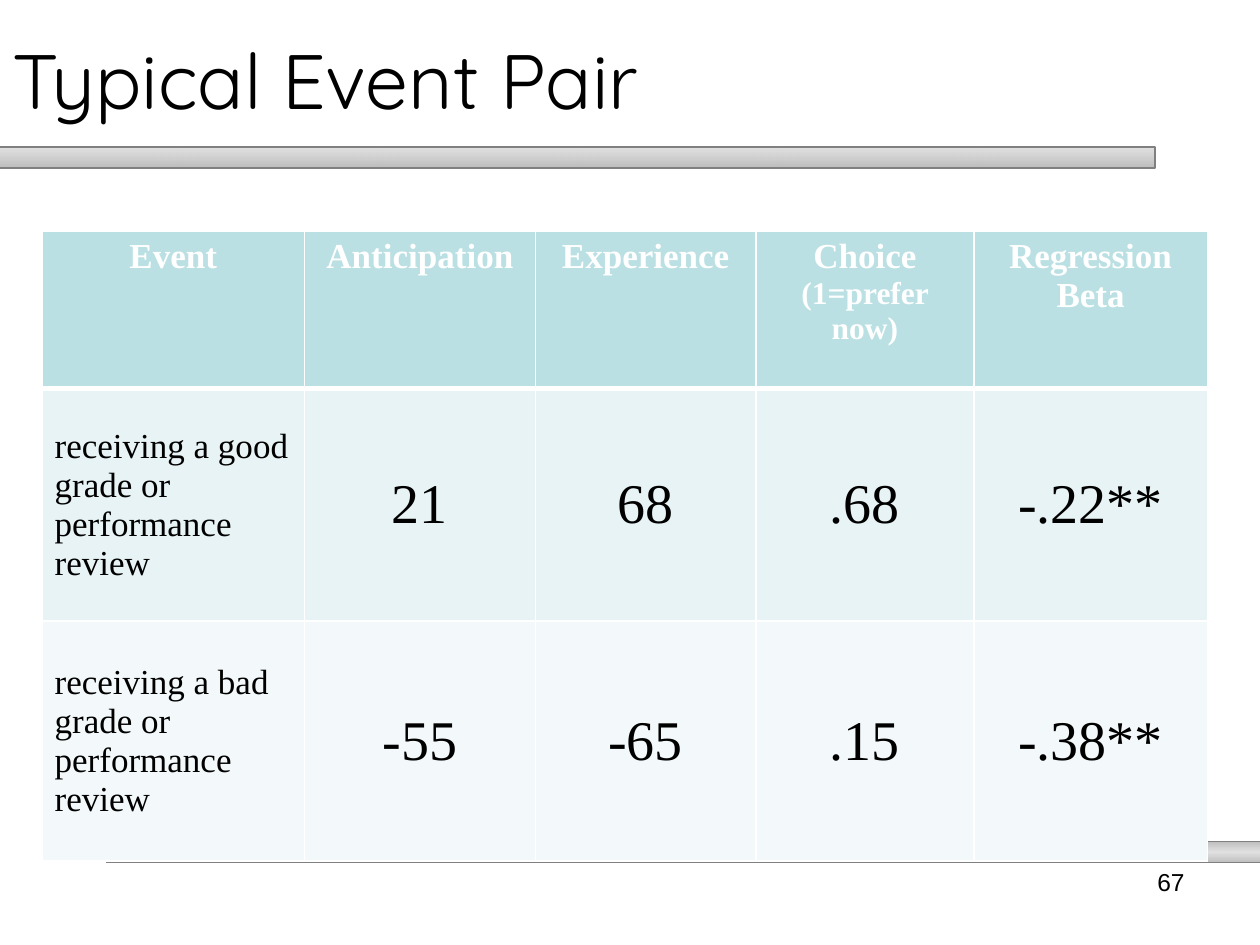
from dataclasses import dataclass

from lxml import etree
from pptx import Presentation
from pptx.dml.color import RGBColor
from pptx.enum.shapes import MSO_SHAPE
from pptx.enum.text import MSO_ANCHOR, PP_ALIGN
from pptx.oxml import parse_xml
from pptx.oxml.ns import nsdecls, qn
from pptx.util import Pt

RECT = MSO_SHAPE.RECTANGLE
LEFT, CENTER, RIGHT = PP_ALIGN.LEFT, PP_ALIGN.CENTER, PP_ALIGN.RIGHT
TOP, MIDDLE = MSO_ANCHOR.TOP, MSO_ANCHOR.MIDDLE

BLACK = RGBColor(0x00, 0x00, 0x00)
WHITE = RGBColor(0xFF, 0xFF, 0xFF)
GRAY = RGBColor(0x80, 0x80, 0x80)
SILVER = RGBColor(0xBD, 0xBD, 0xBD)
LIGHT = RGBColor(0xDD, 0xDD, 0xDD)
TEAL = RGBColor(0xBB, 0xE0, 0xE3)
BANDS = (RGBColor(0xE7, 0xF3, 0xF4), RGBColor(0xF3, 0xF9, 0xFA))

SERIF = "Times New Roman"
COL_WIDTHS = (150, 132, 126, 124.5, 133.5)
ROW_HEIGHTS = (90, 133, 137)


@dataclass(frozen=True)
class Bar:
    left: float
    top: float
    stops: tuple  # (position %, colour, opacity %)


@dataclass(frozen=True)
class Event:
    name: str
    values: tuple


BARS = (
    Bar(-54, 84, ((0, LIGHT, 85), (100, SILVER, 100))),
    Bar(61, 481, ((0, SILVER, 100), (50, LIGHT, 85), (100, SILVER, 100))),
)
HEADERS = (
    (("Event", 20),),
    (("Anticipation", 20),),
    (("Experience", 20),),
    (("Choice", 20), ("(1=prefer now)", 18)),
    (("Regression Beta", 20),),
)
EVENTS = (
    Event("receiving a good grade or performance review", ("21", "68", ".68", "-.22**")),
    Event("receiving a bad grade or performance review", ("-55", "-65", ".15", "-.38**")),
)


def add_bar(slide, bar: Bar) -> None:
    sp = slide.shapes.add_shape(RECT, Pt(bar.left), Pt(bar.top), Pt(714), Pt(12))
    sp.shadow.inherit = False
    sp.line.color.rgb = GRAY
    sp.line.width = Pt(0.75)
    stops = "".join(
        f'<a:gs pos="{pos * 1000}"><a:srgbClr val="{color}">'
        f'<a:alpha val="{opacity * 1000}"/></a:srgbClr></a:gs>'
        for pos, color, opacity in bar.stops
    )
    gradient = parse_xml(
        f'<a:gradFill {nsdecls("a")} rotWithShape="1"><a:gsLst>{stops}</a:gsLst>'
        '<a:lin ang="5400000" scaled="0"/></a:gradFill>'
    )
    sp.element.spPr.find(qn("a:prstGeom")).addnext(gradient)


def write(p, text: str, *, size: float, font: str = SERIF, color: RGBColor = BLACK,
          bold: bool = False, align=CENTER) -> None:
    p.alignment = align
    r = p.add_run()
    r.text = text
    r.font.name = font
    r.font.size = Pt(size)
    r.font.bold = bold
    r.font.color.rgb = color


def add_text(slide, left: float, top: float, width: float, height: float,
             text: str, *, anchor=TOP, **fmt) -> None:
    tf = slide.shapes.add_textbox(Pt(left), Pt(top), Pt(width), Pt(height)).text_frame
    tf.word_wrap = True
    tf.vertical_anchor = anchor
    write(tf.paragraphs[0], text, **fmt)


def set_borders(cell, **widths: float) -> None:
    """Draw white cell borders; L, R, T and B give widths in points."""
    tc_pr = cell._tc.get_or_add_tcPr()
    for i, (side, width) in enumerate(widths.items()):
        ln = etree.Element(qn(f"a:ln{side}"), w=str(Pt(width)))
        fill = etree.SubElement(ln, qn("a:solidFill"))
        etree.SubElement(fill, qn("a:srgbClr"), val=str(WHITE))
        tc_pr.insert(i, ln)


def add_event_table(slide) -> None:
    table = slide.shapes.add_table(
        len(ROW_HEIGHTS), len(COL_WIDTHS), Pt(24), Pt(132),
        Pt(sum(COL_WIDTHS)), Pt(sum(ROW_HEIGHTS))).table
    for col, width in zip(table.columns, COL_WIDTHS):
        col.width = Pt(width)
    for row, height in zip(table.rows, ROW_HEIGHTS):
        row.height = Pt(height)

    for cell, lines in zip(table.rows[0].cells, HEADERS):
        cell.fill.solid()
        cell.fill.fore_color.rgb = TEAL
        set_borders(cell, L=1, R=1, T=1, B=3)
        tf = cell.text_frame
        for i, (text, size) in enumerate(lines):
            p = tf.add_paragraph() if i else tf.paragraphs[0]
            write(p, text, size=size, color=WHITE, bold=True)

    for row_no, (event, band) in enumerate(zip(EVENTS, BANDS), start=1):
        for col_no, text in enumerate((event.name, *event.values)):
            cell = table.cell(row_no, col_no)
            cell.fill.solid()
            cell.fill.fore_color.rgb = band
            cell.vertical_anchor = MIDDLE
            set_borders(cell, L=1, R=1, T=3 if row_no == 1 else 1, B=1)
            write(cell.text_frame.paragraphs[0], text,
                  size=32 if col_no else 20, align=CENTER if col_no else LEFT)


def main() -> None:
    prs = Presentation()
    prs.slide_width, prs.slide_height = Pt(720), Pt(540)
    slide = prs.slides.add_slide(prs.slide_layouts[6])
    for bar in BARS:
        add_bar(slide, bar)
    add_text(slide, 0, 0, 660, 90, "Typical Event Pair", anchor=MIDDLE,
             size=44, font="Quicksand", align=LEFT)
    add_text(slide, 516, 492, 168, 37.5, "67", size=14, font="Arial", align=RIGHT)
    add_event_table(slide)
    prs.save("out.pptx")


if __name__ == "__main__":
    main()
